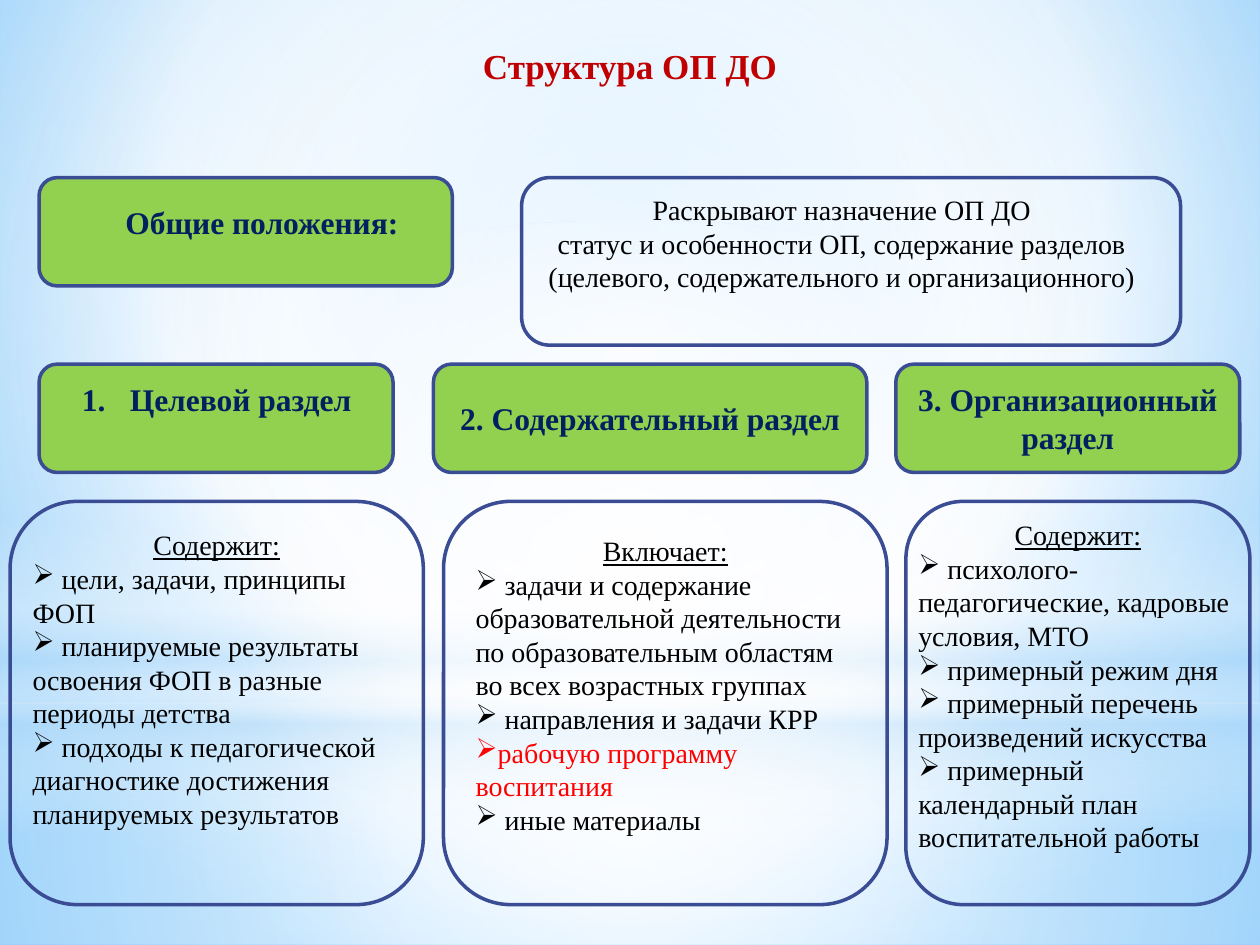
import lxml.etree
import pptx
import pptx.dml.color
import pptx.enum.shapes
import pptx.enum.text
import pptx.oxml.ns
import pptx.util

Inches = pptx.util.Inches
Shape = pptx.enum.shapes.MSO_SHAPE
Align = pptx.enum.text.PP_ALIGN
Anchor = pptx.enum.text.MSO_ANCHOR
qn = pptx.oxml.ns.qn


def color(value):
    return pptx.dml.color.RGBColor.from_string(value)


def add_xml(parent, tag, **attributes):
    element = lxml.etree.SubElement(parent, qn(tag))
    for name, value in attributes.items():
        element.set(name, str(value))
    return element


class SlideBuilder:
    FONT = "Times New Roman"
    GREEN, OUTLINE = "92D050", "3A4C94"
    NAVY, BLACK, CRIMSON, RED = "002060", "000000", "C00000", "FF0000"

    def __init__(self, slide):
        self.slide = slide

    def gradient(self, fill, owner, stops, focus=None, angle=0):
        """Stops are (position, colour, opacity) in percent; focus makes it circular."""
        fill.gradient()
        node = next(owner.iter(qn("a:gradFill")))
        for child in list(node):
            node.remove(child)
        stop_list = add_xml(node, "a:gsLst")
        for position, value, opacity in stops:
            stop = add_xml(stop_list, "a:gs", pos=position * 1000)
            tint = add_xml(stop, "a:srgbClr", val=value)
            if opacity < 100:
                add_xml(tint, "a:alpha", val=opacity * 1000)
        if focus:
            circle = add_xml(node, "a:path", path="circle")
            edges = {side: edge * 1000 for side, edge in zip("ltrb", focus)}
            add_xml(circle, "a:fillToRect", **edges)
        else:
            add_xml(node, "a:lin", ang=angle * 60000, scaled=0)

    def background(self, stops, focus):
        fill = self.slide.background.fill
        self.gradient(fill, self.slide.element, stops, focus)

    def shape(self, kind, place):
        shape = self.slide.shapes.add_shape(kind, *map(Inches, place))
        shape.shadow.inherit = False
        return shape

    def glow(self, kind, place, stops, focus=None, angle=0):
        shape = self.shape(kind, place)
        self.gradient(shape.fill, shape.element, stops, focus, angle)
        shape.line.fill.background()

    def card(self, place, fill=None):
        shape = self.shape(Shape.ROUNDED_RECTANGLE, place)
        if fill:
            shape.fill.solid()
            shape.fill.fore_color.rgb = color(fill)
        else:
            shape.fill.background()
        shape.line.color.rgb = color(self.OUTLINE)
        shape.line.width = pptx.util.Pt(2)
        shape.text_frame.vertical_anchor = Anchor.MIDDLE
        return shape

    def text_box(self, place):
        box = self.slide.shapes.add_textbox(*map(Inches, place))
        box.text_frame.word_wrap = True
        return box

    def style(self, para, size, value, bold=False, underline=False, align=Align.CENTER):
        para.alignment = align
        for span in para.runs:
            span.font.name = self.FONT
            span.font.size = pptx.util.Pt(size)
            span.font.bold = bold
            span.font.underline = underline
            span.font.color.rgb = color(value)

    def centered_text(self, box, text, size, value, bold=False):
        box.text_frame.text = text
        for para in box.text_frame.paragraphs:
            self.style(para, size, value, bold)

    def heading(self, box, text):
        self.centered_text(box, text, 18, self.NAVY, bold=True)

    def number(self, box):
        properties = box.text_frame.paragraphs[0]._p.get_or_add_pPr()
        properties.set("marL", str(Inches(0.38)))
        properties.set("indent", str(Inches(-0.38)))
        add_xml(properties, "a:buAutoNum", type="arabicPeriod")

    def bullet_list(self, box, title, items, highlight=None):
        box.text_frame.text = "\n".join([title, *items])
        first, *rest = box.text_frame.paragraphs
        self.style(first, 16, self.BLACK, underline=True)
        for para in rest:
            value = self.RED if para.text == highlight else self.BLACK
            self.style(para, 16, value, align=Align.LEFT)
            add_xml(para._p.get_or_add_pPr(), "a:buChar", char="➢")


def main():
    deck = pptx.Presentation()
    deck.slide_width, deck.slide_height = Inches(10), Inches(7.5)
    builder = SlideBuilder(deck.slides.add_slide(deck.slide_layouts[6]))
    white, sky = "FFFFFF", "B4DCFA"
    center = (50, 50, 50, 50)

    # Background with soft light
    builder.background([(0, "9ED5FF", 100), (60, white, 100), (100, "5BB9FF", 100)],
                       (20, 10, 20, 60))
    builder.glow(Shape.RECTANGLE, (0, 5.58, 10, 1.92),
                 [(0, white, 91), (37, white, 76), (100, sky, 79)], center)
    builder.glow(Shape.RECTANGLE, (0, 0, 10, 5.58),
                 [(0, white, 89), (48, white, 62), (100, sky, 79)], center)
    builder.glow(Shape.RECTANGLE, (0, 4.12, 10, 2.5),
                 [(0, white, 0), (29, white, 30), (45, sky, 40),
                  (55, white, 26), (65, sky, 60), (100, white, 0)], angle=90)
    builder.glow(Shape.OVAL, (0, 1.75, 10, 5.58),
                 [(0, white, 100), (56, white, 0)], center)

    # Title
    title = builder.text_box((0.5, 0.3, 9, 0.95))
    builder.centered_text(title, "Структура ОП ДО", 20, builder.CRIMSON, bold=True)

    # General provisions
    builder.card((0.31, 1.41, 3.28, 0.86), builder.GREEN)
    builder.heading(builder.text_box((0.55, 1.56, 3.12, 0.4)), "Общие положения: ")
    builder.card((4.14, 1.41, 5.23, 1.33))
    builder.centered_text(
        builder.text_box((4.14, 1.48, 5.08, 0.91)),
        "Раскрывают назначение ОП ДО\nстатус и особенности ОП, содержание разделов "
        "(целевого, содержательного и организационного)", 16, builder.BLACK)

    # Section headings
    sections = [(0.31, 2.81, None), (3.44, 3.44, "2. Содержательный раздел"),
                (7.11, 2.73, "3. Организационный раздел")]
    for left, width, text in sections:
        card = builder.card((left, 2.89, width, 0.86), builder.GREEN)
        if text:
            builder.heading(card, text)
    goal = builder.text_box((0.39, 2.97, 2.66, 0.4))
    builder.heading(goal, "Целевой раздел")
    builder.number(goal)

    # Section contents
    columns = [(0.08, 3.28), (3.52, 3.52), (7.19, 2.73)]
    cards = [builder.card((left, 3.98, width, 3.2)) for left, width in columns]
    builder.bullet_list(builder.text_box((0.16, 4.14, 3.12, 2.52)), "Содержит:", [
        " цели, задачи, принципы ФОП",
        " планируемые результаты освоения ФОП в разные периоды детства",
        " подходы к педагогической диагностике достижения планируемых результатов"])
    program = "рабочую программу воспитания"
    cards[1].text_frame.margin_bottom = Inches(0.34)
    builder.bullet_list(cards[1], "Включает:", [
        " задачи и содержание образовательной деятельности по образовательным "
        "областям во всех возрастных группах",
        " направления и задачи КРР", program, " иные материалы"], highlight=program)
    builder.bullet_list(builder.text_box((7.19, 4.06, 2.73, 3.1)), "Содержит:", [
        " психолого-педагогические, кадровые условия, МТО",
        " примерный режим дня",
        " примерный перечень произведений искусства",
        " примерный календарный план воспитательной работы"])

    deck.save("out.pptx")


if __name__ == "__main__":
    main()
